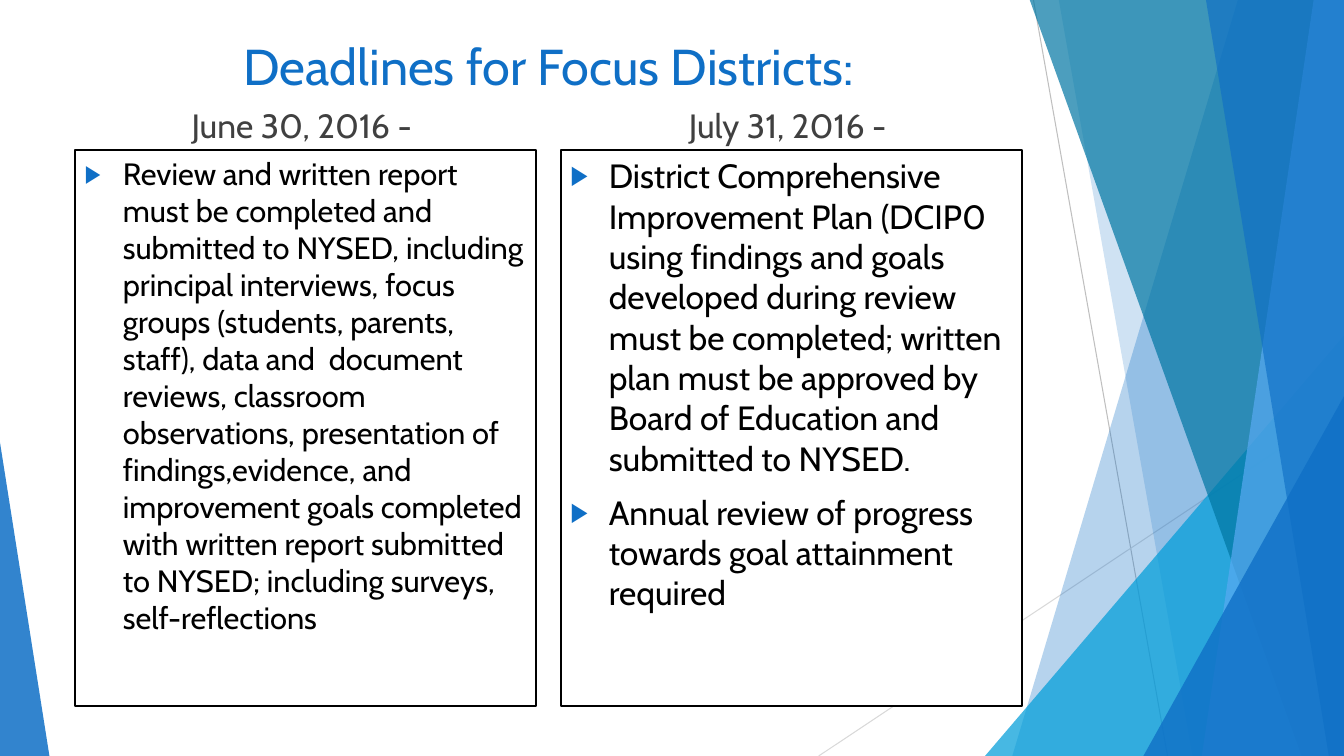
"""Build the slide on deadlines for focus districts."""
from lxml.etree import SubElement
from pptx import Presentation
from pptx.dml.color import RGBColor
from pptx.enum.shapes import MSO_CONNECTOR, MSO_SHAPE
from pptx.enum.text import MSO_ANCHOR as ANCHOR, PP_ALIGN as ALIGN
from pptx.oxml.ns import qn
from pptx.util import Pt

PX = 9144
W, H = 1333, 750
BLUE = RGBColor(0x0F, 0x6F, 0xC6)
CYAN = RGBColor(0x00, 0x9D, 0xD9)
TEAL = RGBColor(0x00, 0x76, 0xA3)
SKY = RGBColor(0x59, 0xAA, 0xF2)
SILVER = RGBColor(0xBF, 0xBF, 0xBF)
PALE = RGBColor(0xD9, 0xD9, 0xD9)
DARK = RGBColor(0x40, 0x40, 0x40)
BLACK = RGBColor(0, 0, 0)
WHITE = RGBColor(0xFF, 0xFF, 0xFF)


def add_text(box, texts, size, color, align=ALIGN.LEFT, anchor=ANCHOR.TOP, before=10):
    sp = s.shapes.add_textbox(*[v * PX for v in box])
    tf = sp.text_frame
    tf.word_wrap = True
    tf.vertical_anchor = anchor
    for i, text in enumerate(texts):
        p = tf.add_paragraph() if i else tf.paragraphs[0]
        p.alignment = align
        p.space_before = Pt(before)
        r = p.add_run()
        r.text = text
        r.font.color.rgb = color
        for name, value in {"name": "Cabin", "size": Pt(size)}.items():
            setattr(r.font, name, value)
    return sp


def add_bullet(p):
    pPr = p._p.get_or_add_pPr()
    pPr.set("marL", str(38 * PX))
    pPr.set("indent", str(-38 * PX))
    SubElement(SubElement(pPr, qn("a:buClr")), qn("a:srgbClr"), val=str(BLUE))
    SubElement(pPr, qn("a:buSzPct"), val="80000")
    SubElement(pPr, qn("a:buFont"), typeface="Arial")
    SubElement(pPr, qn("a:buChar"), char="▶")


prs = Presentation()
prs.slide_width, prs.slide_height = W * PX, H * PX
s = prs.slides.add_slide(prs.slide_layouts[6])

for ends, color in [((1025, 0, 1158, H), SILVER), ((W, 403, 812, H), PALE)]:
    line = s.shapes.add_connector(MSO_CONNECTOR.STRAIGHT, *[v * PX for v in ends])
    line.line.color.rgb = color
    line.line.width = Pt(0.75)
    SubElement(line._element.spPr, qn("a:effectLst"))

facets = [
    ("band", (1228, 1004), BLUE, 30),
    ("band", (1050, 1183), BLUE, 20),
    ("triangle", (977, 333, 356, 417, 1), CYAN, 72),
    ("band", (1021, 1291), TEAL, 70),
    ("band", (1303, 1192), SKY, 70),
    ("band", (1196, 1318), BLUE, 65),
    ("triangle", (1134, 393, 199, 357, 1), BLUE, 80),
    ("triangle", (0, 439, 49, 311, 0), BLUE, 85),
]
for kind, geometry, color, opacity in facets:
    if kind == "band":
        top, bottom = geometry
        fb = s.shapes.build_freeform(top, -1, PX)
        fb.add_line_segments([(W, -1), (W, H), (bottom, H)], close=True)
        sp = fb.convert_to_shape()
    else:
        *box, apex = geometry
        sp = s.shapes.add_shape(MSO_SHAPE.ISOSCELES_TRIANGLE, *[v * PX for v in box])
        sp.adjustments[0] = apex
    sp.shadow.inherit = False
    sp.line.fill.background()
    sp.fill.solid()
    sp.fill.fore_color.rgb = color
    fill = sp._element.spPr.find(qn("a:solidFill"))
    SubElement(fill[0], qn("a:alpha"), val=str(opacity * 1000))

add_text((74, 30, 940, 181), ["Deadlines for Focus Districts:"], 36, BLUE, ALIGN.CENTER, before=0)

columns = [
    (74, "June 30, 2016 - ", 22, [
        "Review and written report must be completed and submitted to NYSED, including "
        "principal interviews, focus groups (students, parents, staff), data and  document "
        "reviews, classroom observations, presentation of findings,evidence, and improvement "
        "goals completed with written report submitted to NYSED; including surveys, "
        "self-reflections",
    ]),
    (556, "July 31, 2016 - ", 24, [
        "District Comprehensive Improvement Plan (DCIP0 using findings and goals developed "
        "during review must be completed; written plan must be approved by Board of Education "
        "and submitted to NYSED.",
        "Annual review of progress towards goal attainment required",
    ]),
]
for x, date, size, tasks in columns:
    add_text((x, 30, 458, 119), [date], 24, DARK, ALIGN.CENTER, ANCHOR.BOTTOM)
    sp = add_text((x, 149, 458, 551), tasks, size, BLACK)
    sp.fill.solid()
    sp.fill.fore_color.rgb = WHITE
    sp.line.color.rgb = BLACK
    sp.line.width = Pt(1.5)
    for p in sp.text_frame.paragraphs:
        add_bullet(p)

prs.save("out.pptx")
